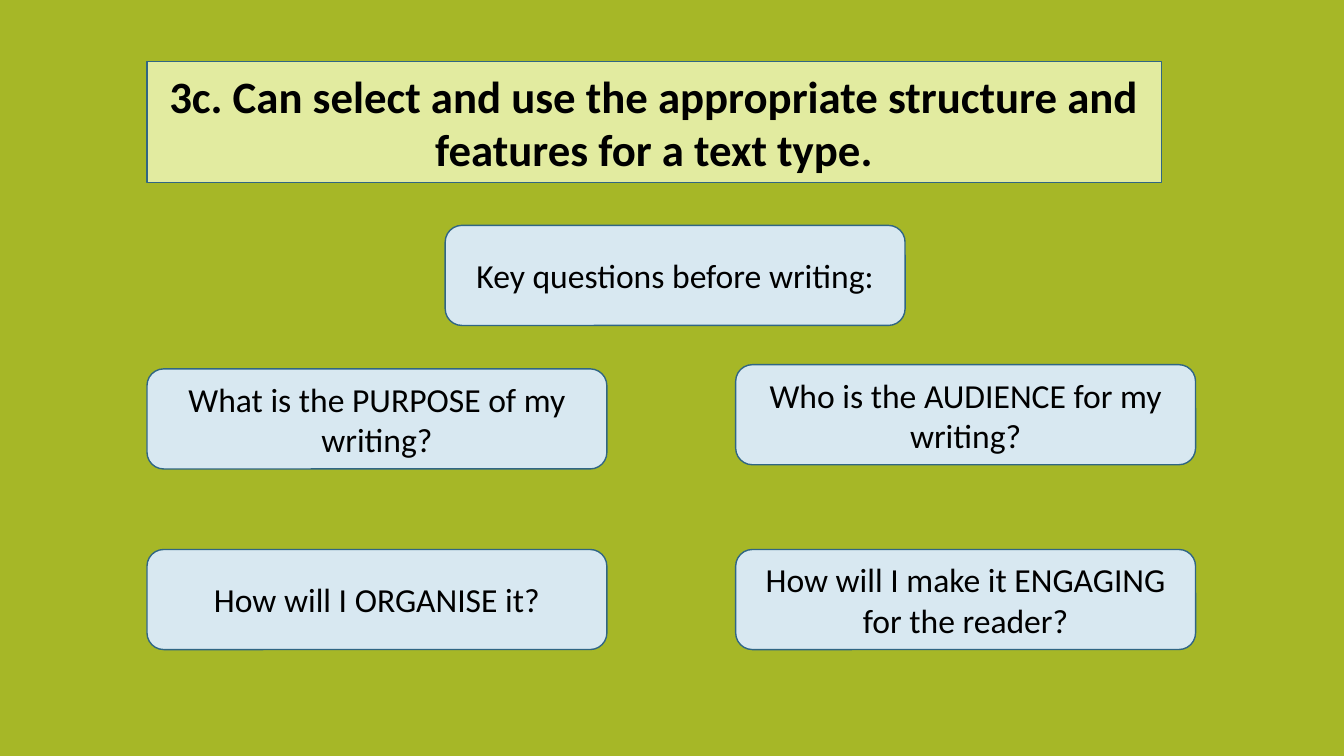
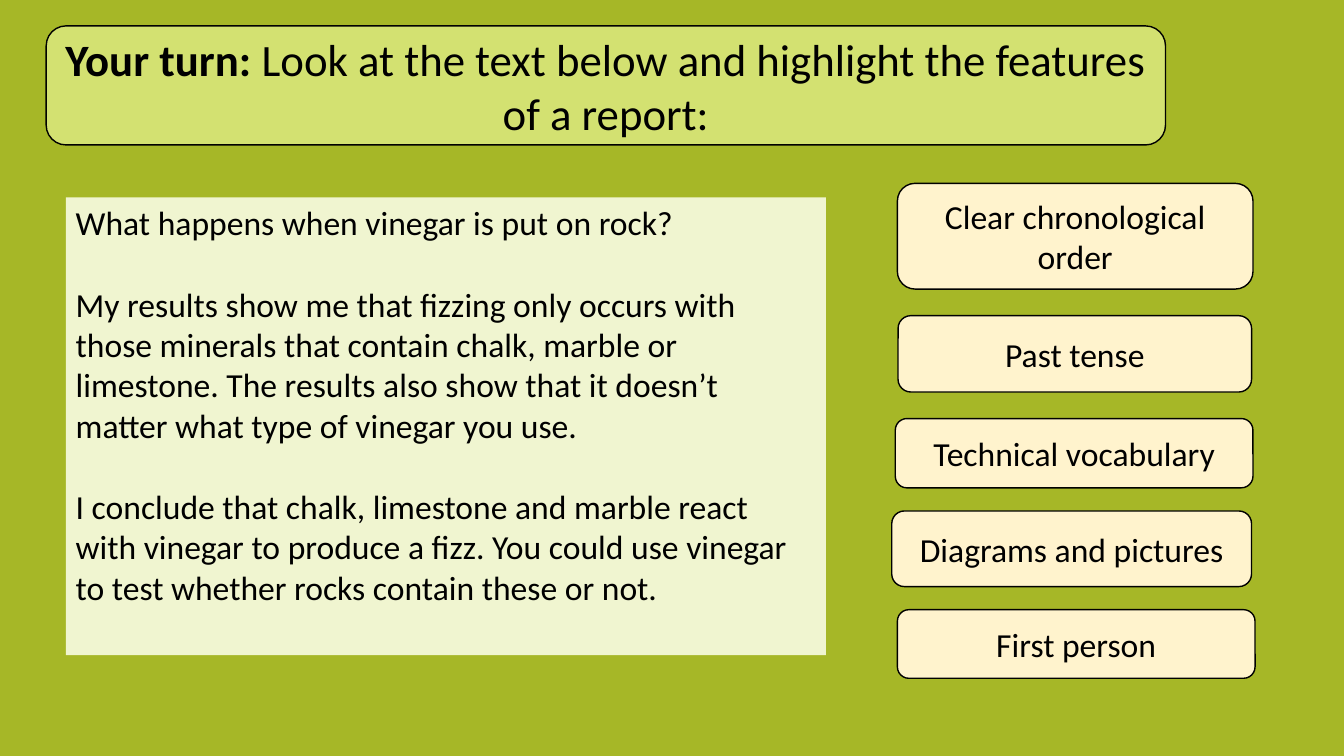
from dataclasses import dataclass

import pptx
import pptx.dml.color
import pptx.enum.shapes
import pptx.enum.text
import pptx.util

Pt = pptx.util.Pt
RECTANGLE = pptx.enum.shapes.MSO_SHAPE.RECTANGLE
ROUNDED = pptx.enum.shapes.MSO_SHAPE.ROUNDED_RECTANGLE


@dataclass(frozen=True)
class Theme:
    font: str = "Calibri"
    heading_size: int = 32
    body_size: int = 24
    paragraph_gap: float = 29.3
    background: str = "A6B727"
    text: str = "000000"
    blue_line: str = "306684"
    black_line: str = "000000"
    objective_fill: str = "E2EBA0"
    question_fill: str = "D8E8F1"
    task_fill: str = "D3E171"
    feature_fill: str = "FFF3CD"
    passage_fill: str = "F0F5D0"


THEME = Theme()

QUESTIONS = [
    ("Key questions before writing:", 318, 161),
    ("What is the PURPOSE of my writing?", 105, 263.5),
    ("Who is the AUDIENCE for my writing?", 525.5, 260.5),
    ("How will I ORGANISE it?", 105, 392.5),
    ("How will I make it ENGAGING for the reader?", 525.5, 392.5),
]
QUESTION_SIZE = (328.5, 71.5)

FEATURES = [
    ("Clear chronological order", (641, 131, 254, 75.5)),
    ("Past tense", (641.5, 225.5, 252.5, 54.5)),
    ("Technical vocabulary", (639.5, 299, 255.5, 49.5)),
    ("Diagrams and pictures", (637, 365, 257, 54)),
    ("First person", (641, 435.5, 255.5, 49)),
]

PASSAGE = [
    "What happens when vinegar is put on rock?",
    "My results show me that fizzing only occurs with those minerals that "
    "contain chalk, marble or limestone. The results also show that it "
    "doesn’t matter what type of vinegar you use.",
    "I conclude that chalk, limestone and marble react with vinegar to "
    "produce a fizz. You could use vinegar to test whether rocks contain "
    "these or not.",
]


def rgb(value):
    return pptx.dml.color.RGBColor.from_string(value)


def paint(area, color):
    area.fill.solid()
    area.fill.fore_color.rgb = rgb(color)


def style_text(paragraph, size, bold=None):
    font = paragraph.font
    font.name = THEME.font
    font.size = Pt(size)
    font.bold = bold
    font.color.rgb = rgb(THEME.text)


def add_panel(slide, outline, box, fill, line, text="", size=THEME.body_size, bold=None):
    """Add a filled, outlined shape with centred text and return its paragraph."""
    panel = slide.shapes.add_shape(outline, *map(Pt, box))
    panel.shadow.inherit = False
    paint(panel, fill)
    panel.line.color.rgb = rgb(line)
    panel.line.width = Pt(1)
    frame = panel.text_frame
    frame.word_wrap = True
    frame.vertical_anchor = pptx.enum.text.MSO_ANCHOR.MIDDLE
    paragraph = frame.paragraphs[0]
    paragraph.text = text
    paragraph.alignment = pptx.enum.text.PP_ALIGN.CENTER
    style_text(paragraph, size, bold)
    return paragraph


def add_passage(slide, box, texts):
    passage = slide.shapes.add_textbox(*map(Pt, box))
    paint(passage, THEME.passage_fill)
    frame = passage.text_frame
    frame.word_wrap = True
    for index, text in enumerate(texts):
        paragraph = frame.add_paragraph() if index else frame.paragraphs[0]
        paragraph.text = text
        paragraph.space_after = Pt(THEME.paragraph_gap)
        style_text(paragraph, THEME.body_size)


def add_questions_slide(slide):
    add_panel(slide, RECTANGLE, (105, 44, 724.5, 86.5), THEME.objective_fill, THEME.blue_line,
              "3c. Can select and use the appropriate structure and features for a text type.",
              THEME.heading_size, bold=True)
    for question, left, top in QUESTIONS:
        add_panel(slide, ROUNDED, (left, top, *QUESTION_SIZE),
                  THEME.question_fill, THEME.blue_line, question)


def add_task_slide(slide):
    task = add_panel(slide, ROUNDED, (33, 18.5, 799.5, 85), THEME.task_fill, THEME.black_line,
                     size=THEME.heading_size)
    lead = task.add_run()
    lead.text = "Your turn: "
    lead.font.bold = True
    task.add_run().text = "Look at the text below and highlight the features of a report:"
    for feature, box in FEATURES:
        add_panel(slide, ROUNDED, box, THEME.feature_fill, THEME.black_line, feature)
    add_passage(slide, (47, 141, 543, 327), PASSAGE)


def main():
    deck = pptx.Presentation()
    deck.slide_width, deck.slide_height = Pt(960), Pt(540)
    paint(deck.slide_master.background, THEME.background)
    blank = deck.slide_layouts[6]
    for build in (add_questions_slide, add_task_slide):
        build(deck.slides.add_slide(blank))
    deck.save("out.pptx")


if __name__ == "__main__":
    main()
